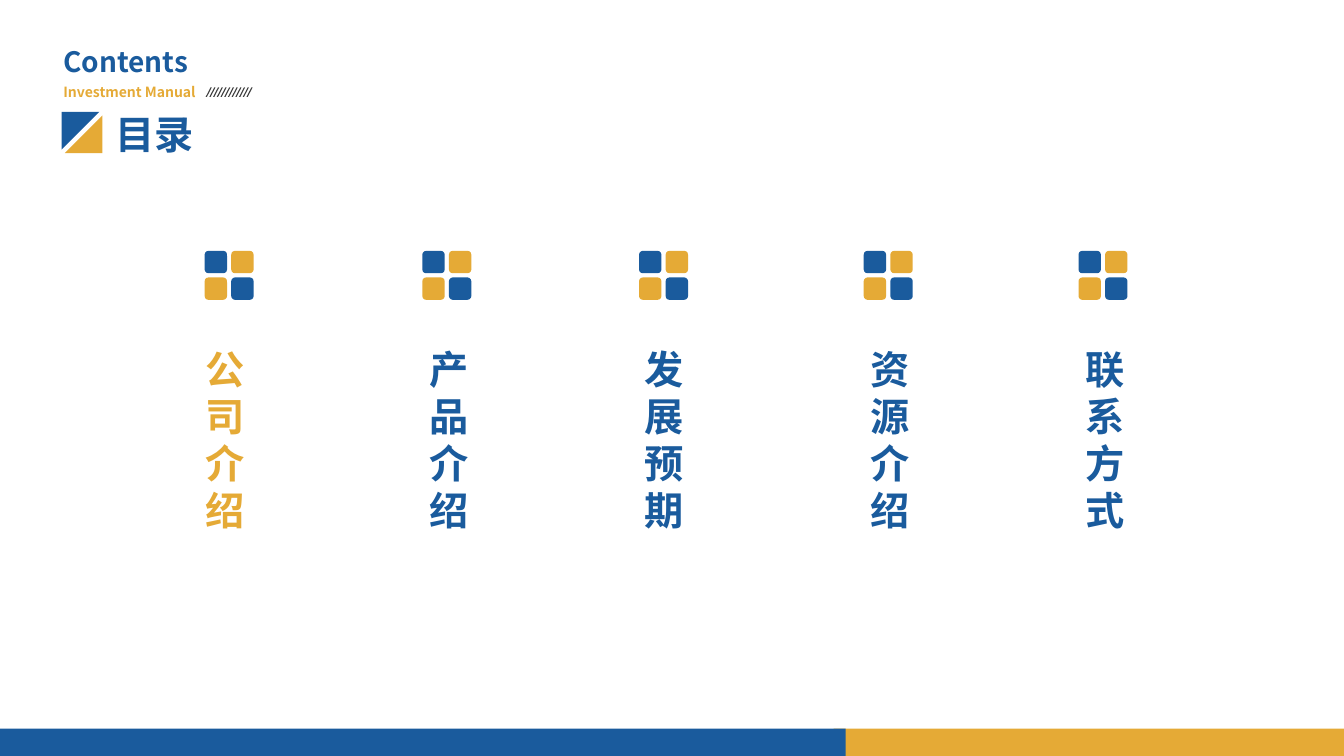
from pptx import Presentation
from pptx.dml.color import RGBColor
from pptx.enum import shapes, text
from pptx.util import Pt

COLORS = {"blue": "1A5B9D", "gold": "E5AA36", "slash": "404040"}
FONT = "Noto Sans CJK SC"
CHAPTERS = [
    ("公司介绍", "gold", 146.2, 139.7, 49.7),
    ("产品介绍", "blue", 301.7, 299.5, 39.6),
    ("发展预期", "blue", 456.5, 453.6, 49.7),
    ("资源介绍", "blue", 617, 614.9, 39.6),
    ("联系方式", "blue", 770.4, 768.2, 31.7),
]


def rgb(color):
    return RGBColor.from_string(COLORS[color])


def paint(shape, color):
    shape.shadow.inherit = False
    shape.fill.solid()
    shape.fill.fore_color.rgb = rgb(color)
    shape.line.fill.background()


def add_block(parent, kind, left, top, width, height, color, rotation=0):
    shape = parent.shapes.add_shape(kind, Pt(left), Pt(top), Pt(width), Pt(height))
    shape.rotation = rotation
    paint(shape, color)


def add_label(parent, wording, left, top, width, height, size, color, wrap=False):
    shape = parent.shapes.add_textbox(Pt(left), Pt(top), Pt(width), Pt(height))
    frame = shape.text_frame
    frame.word_wrap = wrap
    frame.auto_size = text.MSO_AUTO_SIZE.SHAPE_TO_FIT_TEXT
    paragraph = frame.paragraphs[0]
    paragraph.text = wording
    paragraph.line_spacing = Pt(size * 1.2)
    paragraph.font.name = FONT
    paragraph.font.size = Pt(size)
    paragraph.font.bold = True
    paragraph.font.color.rgb = rgb(color)


def add_slashes(parent, left, top, count=12, step=2.65, slant=3.5, thickness=0.9, height=6.8):
    builder = None
    for index in range(count):
        foot = left + index * step
        head = foot + slant
        bottom = top + height
        corners = [(head, top), (head + thickness, top), (foot + thickness, bottom), (foot, bottom)]
        start, *others = [(Pt(x), Pt(y)) for x, y in corners]
        if builder is None:
            builder = parent.shapes.build_freeform(*start)
        else:
            builder.move_to(*start)
        builder.add_line_segments(others, close=True)
    paint(builder.convert_to_shape(), "slash")


def add_heading(slide):
    heading = slide.shapes.add_group_shape()
    triangle = shapes.MSO_SHAPE.RIGHT_TRIANGLE
    add_block(heading, triangle, 44, 80, 26.9, 26.9, "blue", 90)
    add_block(heading, triangle, 46.3, 82.5, 26.9, 26.9, "gold", 270)
    add_label(heading, "目录", 75.6, 75.6, 71.3, 41, 28, "blue")
    add_label(heading, "Investment Manual", 38.2, 56.2, 113, 19.4, 10, "gold")
    add_slashes(heading, 146.9, 62.5)
    add_label(heading, "Contents", 38.2, 28.1, 105.8, 31.7, 20, "blue")


def add_chapter(slide, title, color, icon_left, title_left, title_width):
    chapter = slide.shapes.add_group_shape()
    add_label(chapter, title, title_left, 243.4, title_width, 144, 28, color, wrap=True)
    for row in range(2):
        for column in range(2):
            add_block(chapter, shapes.MSO_SHAPE.ROUNDED_RECTANGLE,
                      icon_left + column * 19, 179.2 + row * 19, 16, 16,
                      "blue" if row == column else "gold")


def main():
    presentation = Presentation()
    presentation.slide_width = Pt(960)
    presentation.slide_height = Pt(540)
    slide = presentation.slides.add_slide(presentation.slide_layouts[6])
    add_block(slide, shapes.MSO_SHAPE.RECTANGLE, 595.5, 520.5, 364.5, 19.5, "gold")
    add_block(slide, shapes.MSO_SHAPE.RECTANGLE, 0, 520.5, 604, 19.5, "blue")
    add_heading(slide)
    for chapter in CHAPTERS:
        add_chapter(slide, *chapter)
    presentation.save("out.pptx")


if __name__ == "__main__":
    main()
